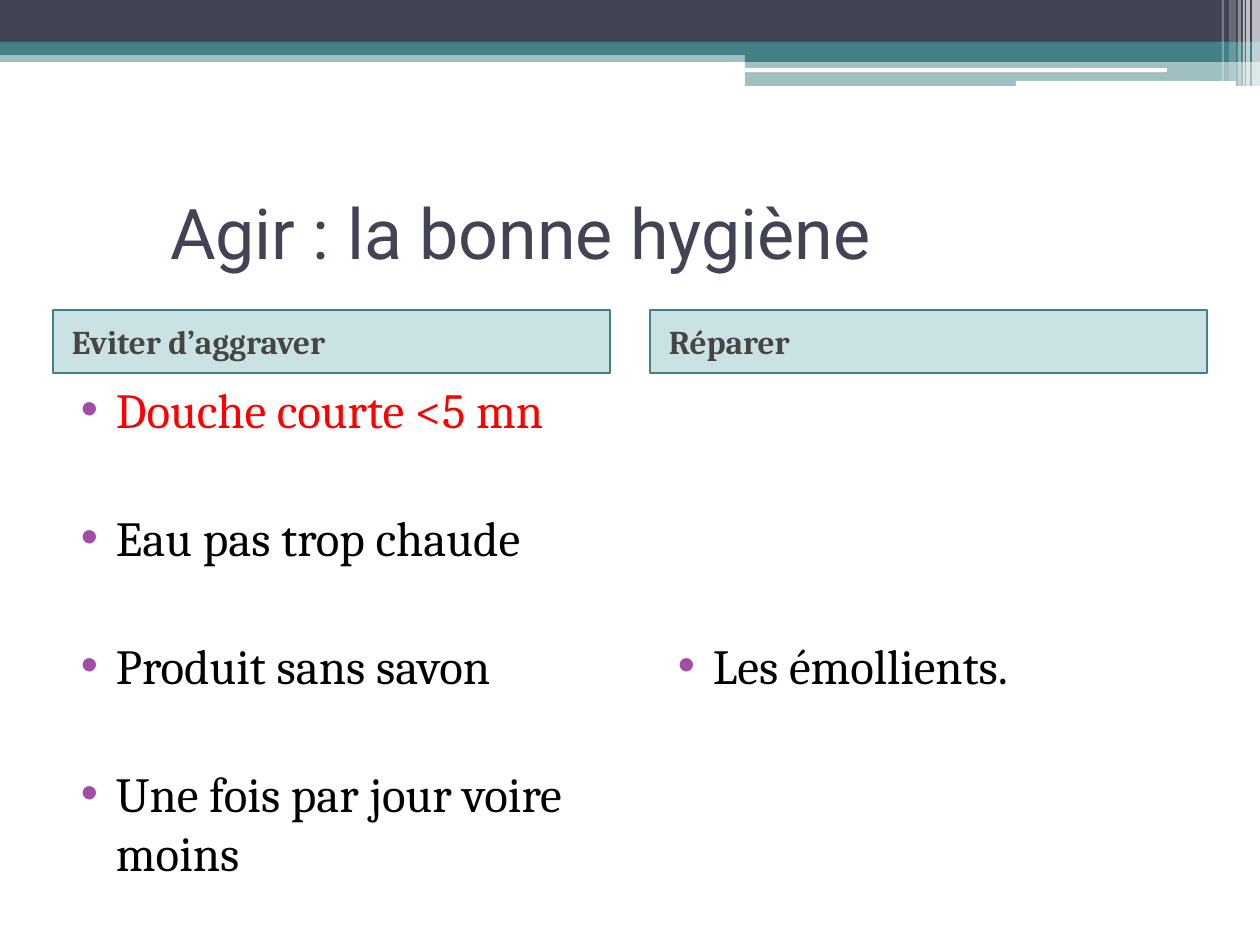
from typing import NamedTuple

from pptx import Presentation
from pptx.dml.color import RGBColor
from pptx.enum.shapes import MSO_SHAPE
from pptx.enum.text import MSO_ANCHOR, MSO_AUTO_SIZE, PP_ALIGN
from pptx.oxml.ns import qn
from pptx.util import Emu, Pt
from lxml import etree

RECT, ROUND = MSO_SHAPE.RECTANGLE, MSO_SHAPE.ROUNDED_RECTANGLE
TOP, MIDDLE = MSO_ANCHOR.TOP, MSO_ANCHOR.MIDDLE
LEFT = PP_ALIGN.LEFT
NO_FIT = MSO_AUTO_SIZE.NONE

COLORS = {
    "navy": "424456", "teal": "438086", "tint": "328E97", "white": "FFFFFF",
    "red": "FF0000", "black": "000000", "gray": "454545", "dot": "A04DA3",
}
SCALE = 914400 / 126
WIDE, HIGH = 1260, 945
PAD = 13  # side inset of a text frame
COLS = (53, 650)
COL_W = 557
HEAD_Y, HEAD_H = 310, 63
LIST_Y, LIST_H = HEAD_Y + HEAD_H, 535
ROW_GAP = 39.6  # points between two list items
DROP = 256  # the right list starts level with the third left item


class Band(NamedTuple):
    x: int
    y: int
    w: int
    h: int
    color: str
    alpha: int = 100
    kind: int = RECT


class Item(NamedTuple):
    text: str
    color: str = "black"


BANDS = [
    Band(0, 50, WIDE, 12, "teal", 50),
    Band(0, 0, WIDE, 42, "navy"),
    Band(0, 42, WIDE, 13, "teal"),
    Band(745, 49, 515, 13, "teal"),
    Band(745, 61, 515, 25, "teal", 50),
    Band(745, 68, 422, 4, "white", kind=ROUND),
    Band(1016, 81, 220, 5, "white", kind=ROUND),
    Band(1252, 0, 8, 86, "white", 65),
    Band(1246, 0, 4, 86, "white", 65),
    Band(1243, 0, 2, 86, "white", 60),
    Band(1238, 0, 3, 86, "white", 40),
    Band(1229, 0, 7, 81, "white", 20),
    Band(1222, 0, 2, 81, "white", 30),
]
HEADS = ["Eviter d’aggraver", "Réparer"]
LISTS = [
    [Item("Douche courte <5 mn", "red"), Item("Eau pas trop chaude"),
     Item("Produit sans savon"), Item("Une fois par jour voire moins")],
    [Item("Les émollients.")],
]


def px(num: int) -> Emu:
    return Emu(round(num * SCALE))


def rgb(name: str) -> RGBColor:
    return RGBColor.from_string(COLORS[name])


def paint(shape, color: str, alpha: int = 100) -> None:
    shape.fill.solid()
    shape.fill.fore_color.rgb = rgb(color)
    if alpha < 100:
        node = shape.fill._xPr.find(qn("a:solidFill"))[0]
        etree.SubElement(node, qn("a:alpha"), val=str(alpha * 1000))


def draw_band(slide, band: Band) -> None:
    shape = slide.shapes.add_shape(
        band.kind, px(band.x), px(band.y), px(band.w), px(band.h))
    shape.shadow.inherit = False
    shape.line.fill.background()
    paint(shape, band.color, band.alpha)


def place(shape, x: int, y: int, w: int, h: int, *, anchor=MIDDLE,
          inset: int = PAD, drop: int = 0):
    """Move a placeholder to the front and return its text frame."""
    shape.left, shape.top, shape.width, shape.height = map(px, (x, y, w, h))
    shape.element.getparent().append(shape.element)
    frame = shape.text_frame
    frame.word_wrap, frame.auto_size = True, NO_FIT
    frame.vertical_anchor = anchor
    frame.margin_left, frame.margin_right = px(inset), px(PAD)
    frame.margin_top, frame.margin_bottom = px(6 + drop), px(6)
    return frame


def write(para, text: str, *, size: int, color: str, font: str = "Cambria",
          bold: bool = False, before: float = 3, left: int = 0,
          hang: int = 0, dot: bool = False) -> None:
    para.alignment = LEFT
    para.space_before = Pt(before)
    run = para.add_run()
    run.text = text
    run.font.name, run.font.size, run.font.bold = font, Pt(size), bold
    run.font.color.rgb = rgb(color)
    props = para._p.get_or_add_pPr()
    props.set("marL", str(px(left)))
    props.set("indent", str(px(-hang)))
    if dot:
        tint = etree.SubElement(props, qn("a:buClr"))
        etree.SubElement(tint, qn("a:srgbClr"), val=COLORS["dot"])
        etree.SubElement(props, qn("a:buChar"), char="•")


def fill_list(shape, x: int, items: list[Item], drop: int) -> None:
    frame = place(shape, x, LIST_Y, COL_W, LIST_H, anchor=TOP, drop=drop)
    for num, item in enumerate(items):
        para = frame.add_paragraph() if num else frame.paragraphs[0]
        write(para, item.text, size=28, color=item.color, left=50, hang=35,
              before=ROW_GAP if num else 3, dot=True)


def fill_head(shape, x: int, text: str) -> None:
    frame = place(shape, x, HEAD_Y, COL_W, HEAD_H)
    paint(shape, "tint", 25)
    shape.line.color.rgb = rgb("teal")
    shape.line.width = Pt(1)
    write(frame.paragraphs[0], text, size=19, color="gray", bold=True, left=6)


def main() -> None:
    deck = Presentation()
    deck.slide_width, deck.slide_height = px(WIDE), px(HIGH)
    slide = deck.slides.add_slide(deck.slide_layouts.get_by_name("Comparison"))
    title, head_a, list_a, head_b, list_b = slide.placeholders

    for band in BANDS:
        draw_band(slide, band)
    frame = place(title, 53, 158, 1155, 147, inset=117)
    write(frame.paragraphs[0], "Agir : la bonne hygiène", size=40,
          color="navy", font="Roboto", before=0)
    for shape, x, items, drop in zip((list_a, list_b), COLS, LISTS, (0, DROP)):
        fill_list(shape, x, items, drop)
    for shape, x, text in zip((head_a, head_b), COLS, HEADS):
        fill_head(shape, x, text)
    deck.save("out.pptx")


if __name__ == "__main__":
    main()
